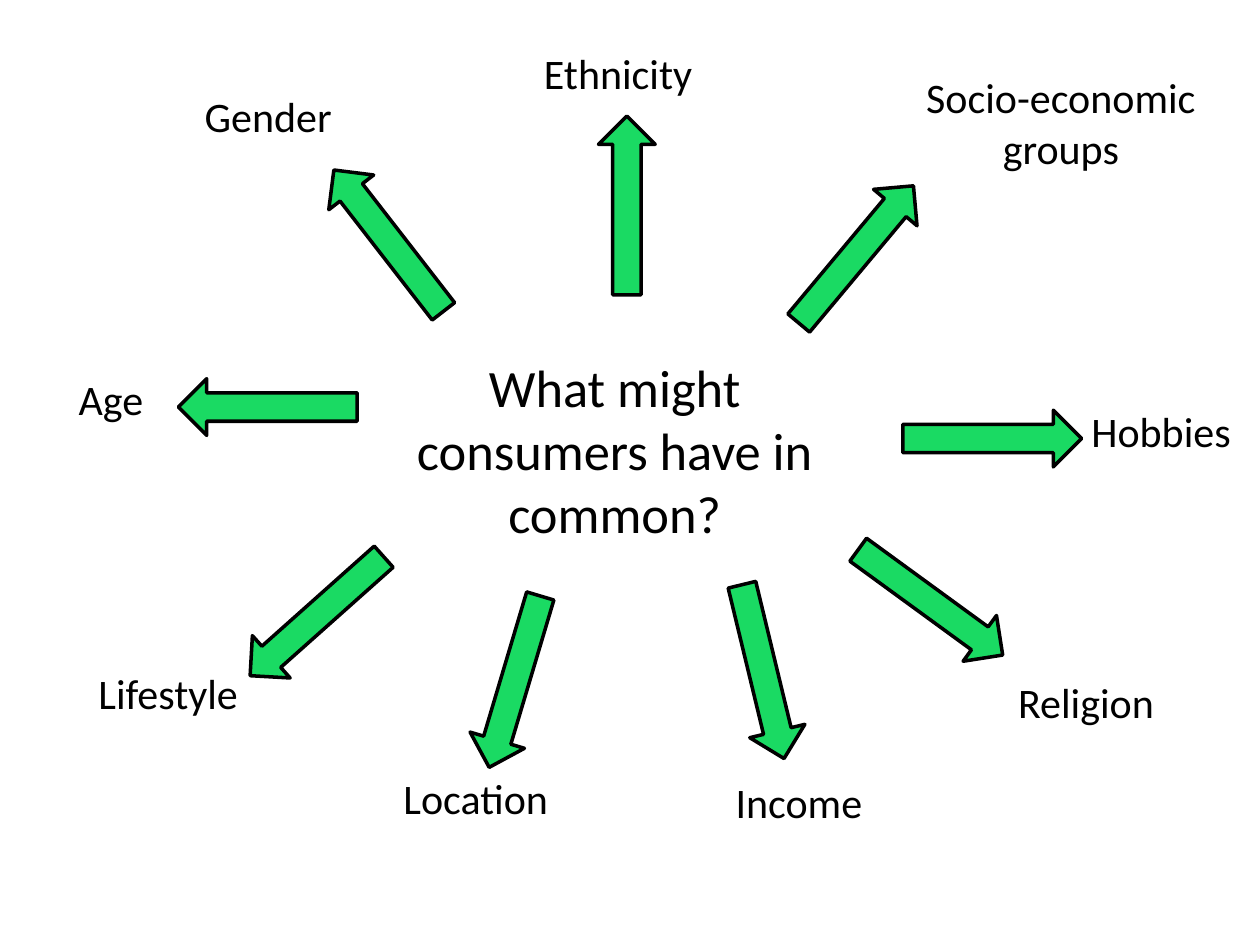
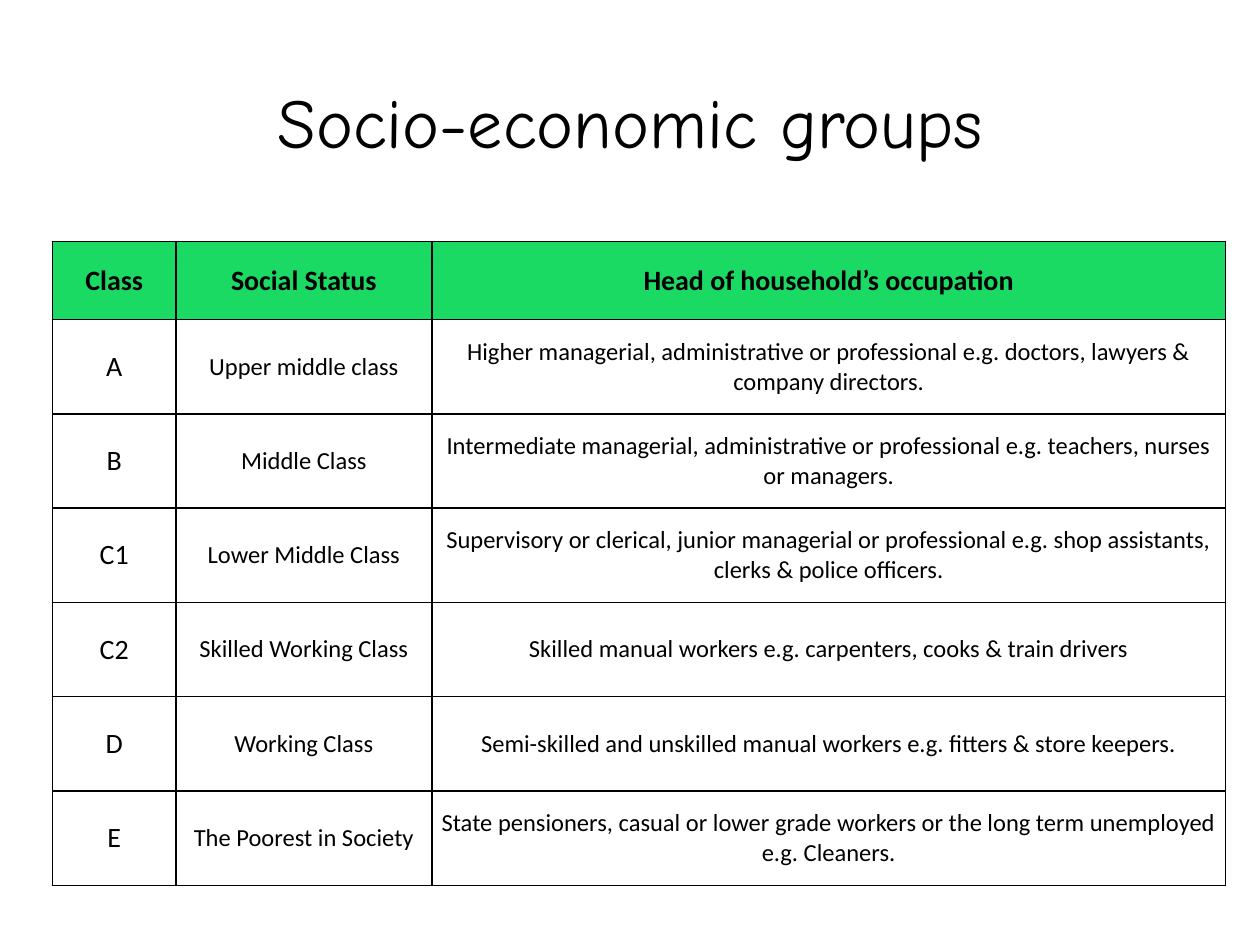
from pptx import Presentation
from pptx.dml.color import RGBColor
from pptx.enum.shapes import MSO_SHAPE
from pptx.enum.text import MSO_ANCHOR, MSO_AUTO_SIZE, PP_ALIGN
from pptx.oxml import parse_xml
from pptx.oxml.ns import nsdecls
from pptx.util import Pt

BLACK = RGBColor(0, 0, 0)
GREEN = RGBColor(0x1A, 0xDA, 0x63)
BODY = "Calibri"
HAND = "Comic Neue"

# Label, its box (left, top, width, height), arrow centre and angle
SPOKES = [
    ("Age", (18, 210.2, 90.7, 36), (153, 232.6), 270),
    ("Gender", (102.2, 48.2, 102.2, 36), (222.1, 137.5), 322.2),
    ("Ethnicity", (293.8, 23.8, 118.8, 36), (358.2, 117.4), 0),
    ("Socio-economic groups", (518.4, 37.4, 175.7, 65.5), (489.2, 145.4), 39.9),
    ("Hobbies", (607, 228.2, 113, 36), (567, 250.6), 90),
    ("Religion", (569.5, 383, 102.2, 36), (531.7, 344.2), 126.1),
    ("Income", (405.4, 439.9, 102.2, 36), (436, 383.8), 166.4),
    ("Location", (203.8, 437.8, 136.1, 36), (294.1, 389.5), 196.6),
    ("Lifestyle", (36.7, 378, 118.8, 36), (181.1, 352.1), 228.3),
]

GROUPS = [
    ("Class", "Social Status", "Head of household’s occupation"),
    ("A", "Upper middle class",
     "Higher managerial, administrative or professional e.g. doctors, "
     "lawyers & company directors."),
    ("B", "Middle Class",
     "Intermediate managerial, administrative or professional e.g. "
     "teachers, nurses or managers."),
    ("C1", "Lower Middle Class",
     "Supervisory or clerical, junior managerial or professional e.g. "
     "shop assistants, clerks & police officers."),
    ("C2", "Skilled Working Class",
     "Skilled manual workers e.g. carpenters, cooks & train drivers"),
    ("D", "Working Class",
     "Semi-skilled and unskilled manual workers e.g. fitters & store keepers."),
    ("E", "The Poorest in Society",
     "State pensioners, casual or lower grade workers or the long term "
     "unemployed e.g. Cleaners."),
]


class Deck:
    """Holds the shared style and the current slide."""

    def __init__(self):
        self.prs = Presentation()
        self.prs.slide_width, self.prs.slide_height = Pt(720), Pt(540)
        self.slide = None

    def put(self, frame, text, size, font=BODY, bold=False):
        frame.text = text
        para = frame.paragraphs[0]
        para.alignment = PP_ALIGN.CENTER
        para.font.name, para.font.size = font, Pt(size)
        para.font.bold, para.font.color.rgb = bold, BLACK

    def title(self, text, box, size, font=BODY):
        """Start a new slide with its title."""
        self.slide = self.prs.slides.add_slide(self.prs.slide_layouts[5])
        shape = self.slide.shapes.title
        shape.left, shape.top, shape.width, shape.height = map(Pt, box)
        frame = shape.text_frame
        frame.auto_size = MSO_AUTO_SIZE.NONE
        frame.vertical_anchor = MSO_ANCHOR.MIDDLE
        self.put(frame, text, size, font)

    def label(self, text, box):
        frame = self.slide.shapes.add_textbox(*map(Pt, box)).text_frame
        frame.word_wrap = True
        frame.auto_size = MSO_AUTO_SIZE.SHAPE_TO_FIT_TEXT
        self.put(frame, text, 24)

    def arrow(self, centre, angle, width=32.4, height=102.2):
        x, y = centre
        shape = self.slide.shapes.add_shape(
            MSO_SHAPE.UP_ARROW, Pt(x - width / 2), Pt(y - height / 2),
            Pt(width), Pt(height))
        shape.rotation = angle
        shape.shadow.inherit = False
        shape.fill.solid()
        shape.fill.fore_color.rgb = GREEN
        shape.line.color.rgb = BLACK
        shape.line.width = Pt(2)

    def border(self, cell):
        props = cell._tc.get_or_add_tcPr()
        for at, side in enumerate(("lnL", "lnR", "lnT", "lnB")):
            props.insert(at, parse_xml(
                f'<a:{side} {nsdecls("a")} w="{Pt(1)}"><a:solidFill>'
                f'<a:srgbClr val="{BLACK}"/></a:solidFill></a:{side}>'))

    def table(self, rows, left, top, widths, heights):
        grid = self.slide.shapes.add_table(
            len(rows), len(widths), Pt(left), Pt(top),
            Pt(sum(widths)), Pt(sum(heights))).table
        for col, width in zip(grid.columns, widths):
            col.width = Pt(width)
        for r, (row, height) in enumerate(zip(rows, heights)):
            grid.rows[r].height = Pt(height)
            for c, text in enumerate(row):
                cell, head = grid.cell(r, c), r == 0
                cell.vertical_anchor = MSO_ANCHOR.MIDDLE
                cell.margin_left = cell.margin_right = Pt(5)
                cell.margin_top = cell.margin_bottom = Pt(0)
                if head:
                    cell.fill.solid()
                    cell.fill.fore_color.rgb = GREEN
                else:
                    cell.fill.background()
                size = 16 if head or c == 0 else 14
                self.put(cell.text_frame, text, size, bold=head)
                self.border(cell)


def main():
    deck = Deck()

    # Mind map: question in the middle, arrows out to the answers
    deck.title("What might consumers have in common?",
               (228.2, 185.8, 246.2, 141.8), 30)
    for text, box, centre, angle in SPOKES:
        deck.label(text, box)
        deck.arrow(centre, angle)

    # Table of the groups
    deck.title("Socio-economic groups", (18, 23.8, 684, 90), 40, HAND)
    deck.table(GROUPS, 30, 138, (70.6, 146.2, 453.6), [44.6] + [53.9] * 6)

    deck.prs.save("out.pptx")


if __name__ == "__main__":
    main()
